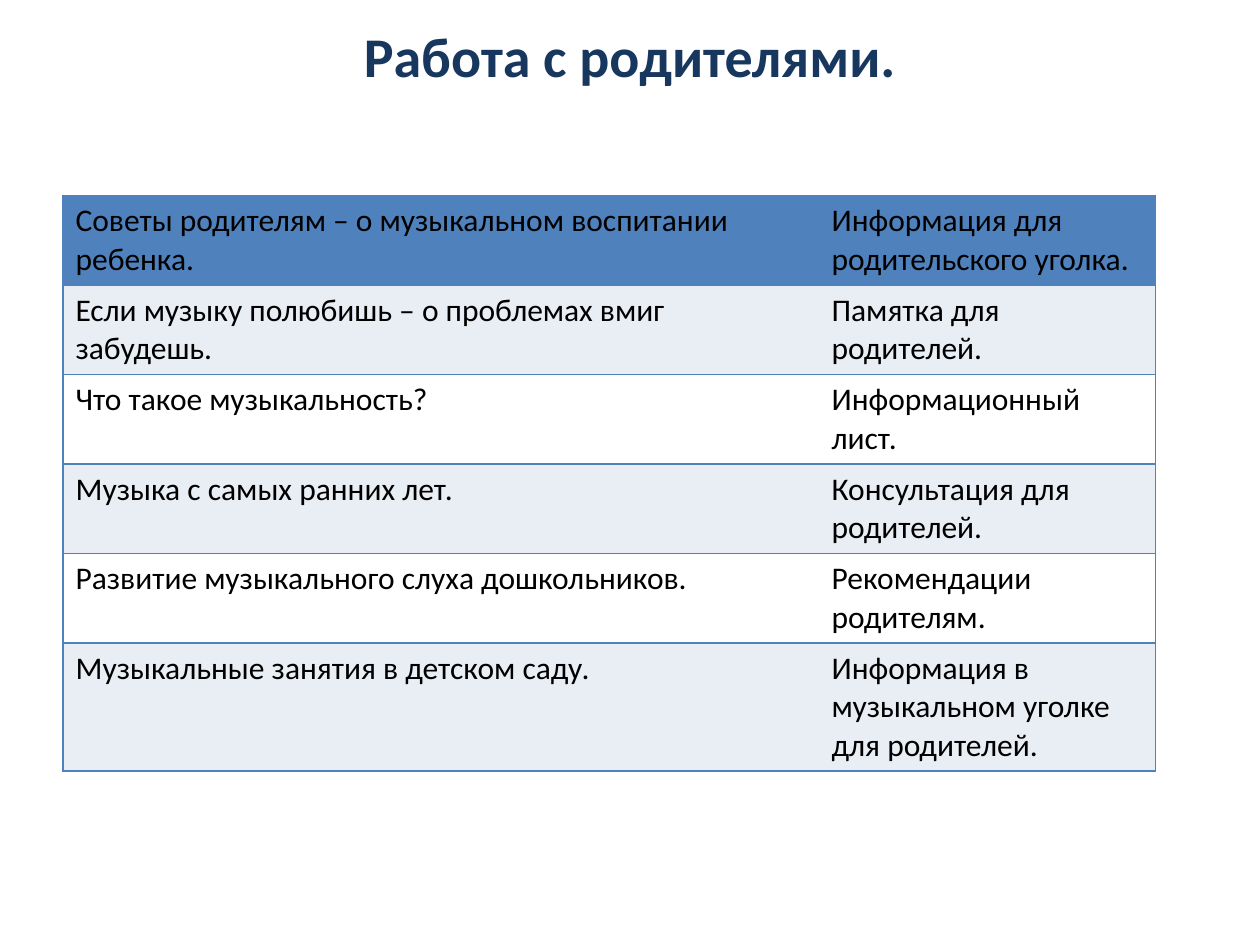
from dataclasses import dataclass

import lxml.etree
import pptx
import pptx.dml.color
import pptx.enum.text
import pptx.oxml.ns
import pptx.util

RGBColor = pptx.dml.color.RGBColor
Inches = pptx.util.Inches
Pt = pptx.util.Pt
qn = pptx.oxml.ns.qn

NAVY = RGBColor(0x17, 0x37, 0x5E)
BLUE = RGBColor(0x4F, 0x81, 0xBD)
PALE = RGBColor(0xE9, 0xED, 0xF4)
WHITE = RGBColor(0xFF, 0xFF, 0xFF)
BLACK = RGBColor(0x00, 0x00, 0x00)

TITLE_FORMAT = {"name": "Calibri", "size": Pt(32), "bold": True}
CELL_FORMAT = {"name": "Calibri", "size": Pt(18), "bold": False}
COLUMN_WIDTHS = (6, 2.67)


@dataclass
class Activity:
    topic: str
    form: str
    height: float


ACTIVITIES = [
    Activity("Советы родителям – о музыкальном воспитании ребенка.",
             "Информация для родительского уголка.", 0.55),
    Activity("Если музыку полюбишь – о проблемах вмиг забудешь.",
             "Памятка для родителей.", 0.65),
    Activity("Что такое музыкальность?", "Информационный лист.", 0.66),
    Activity("Музыка с самых ранних лет.", "Консультация для родителей.", 0.67),
    Activity("Развитие музыкального слуха дошкольников.",
             "Рекомендации родителям.", 0.69),
    Activity("Музыкальные занятия в детском саду.",
             "Информация в музыкальном уголке для родителей.", 0.89),
]


def format_font(font, values: dict, color: RGBColor) -> None:
    for attribute, value in values.items():
        setattr(font, attribute, value)
    font.color.rgb = color


def draw_borders(cell, visible_sides: str) -> None:
    properties = cell._tc.get_or_add_tcPr()
    for side in "LRTB":
        line = lxml.etree.SubElement(properties, qn(f"a:ln{side}"), w=str(Pt(1)))
        if side in visible_sides:
            fill = lxml.etree.SubElement(line, qn("a:solidFill"))
            lxml.etree.SubElement(fill, qn("a:srgbClr"), val=str(BLUE))
        else:
            lxml.etree.SubElement(line, qn("a:noFill"))


def fill_cell(cell, text: str, color: RGBColor, visible_sides: str) -> None:
    draw_borders(cell, visible_sides)
    cell.fill.solid()
    cell.fill.fore_color.rgb = color
    cell.text = text
    format_font(cell.text_frame.paragraphs[0].runs[0].font, CELL_FORMAT, BLACK)


def add_title(slide, text: str) -> None:
    title = slide.shapes.title
    title.left, title.top = Inches(0.5), Inches(0.13)
    title.width, title.height = Inches(9), Inches(0.62)
    title.text = text
    frame = title.text_frame
    frame.vertical_anchor = pptx.enum.text.MSO_ANCHOR.MIDDLE
    paragraph = frame.paragraphs[0]
    paragraph.alignment = pptx.enum.text.PP_ALIGN.CENTER
    format_font(paragraph.runs[0].font, TITLE_FORMAT, NAVY)


def add_activities(slide, activities: list[Activity]) -> None:
    table = slide.shapes.add_table(
        len(activities), len(COLUMN_WIDTHS), Inches(0.5), Inches(1.55),
        Inches(sum(COLUMN_WIDTHS)), Inches(4.5)).table
    for column, width in zip(table.columns, COLUMN_WIDTHS):
        column.width = Inches(width)
    for index, activity in enumerate(activities):
        table.rows[index].height = Inches(activity.height)
        if index == 0:
            color = BLUE
        else:
            color = PALE if index % 2 else WHITE
        fill_cell(table.cell(index, 0), activity.topic, color, "LTB")
        fill_cell(table.cell(index, 1), activity.form, color, "RTB")


def main() -> None:
    presentation = pptx.Presentation()
    presentation.slide_width = Inches(10)
    presentation.slide_height = Inches(7.5)
    slide = presentation.slides.add_slide(presentation.slide_layouts[5])
    add_title(slide, "Работа с родителями.")
    add_activities(slide, ACTIVITIES)
    presentation.save("out.pptx")


if __name__ == "__main__":
    main()
